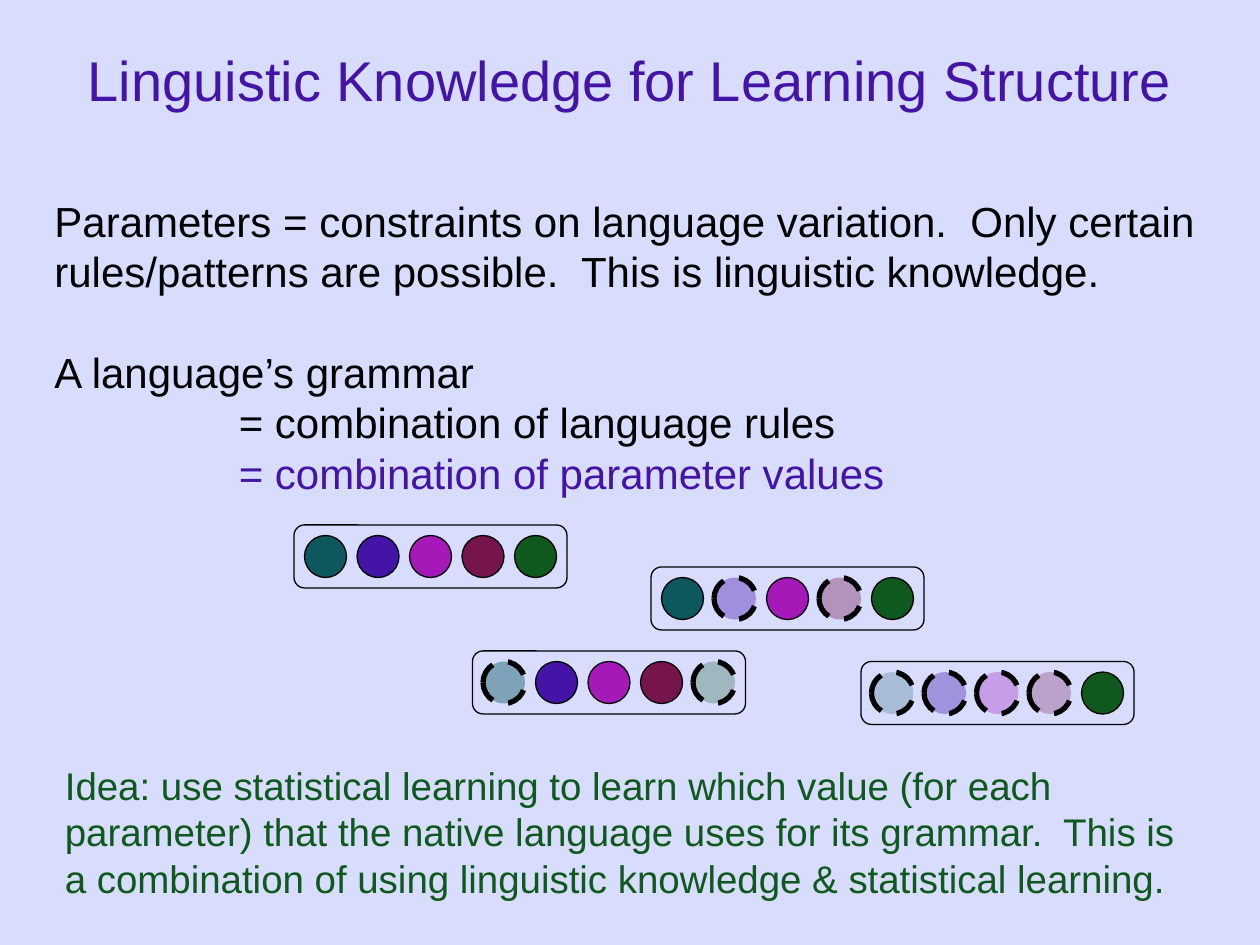
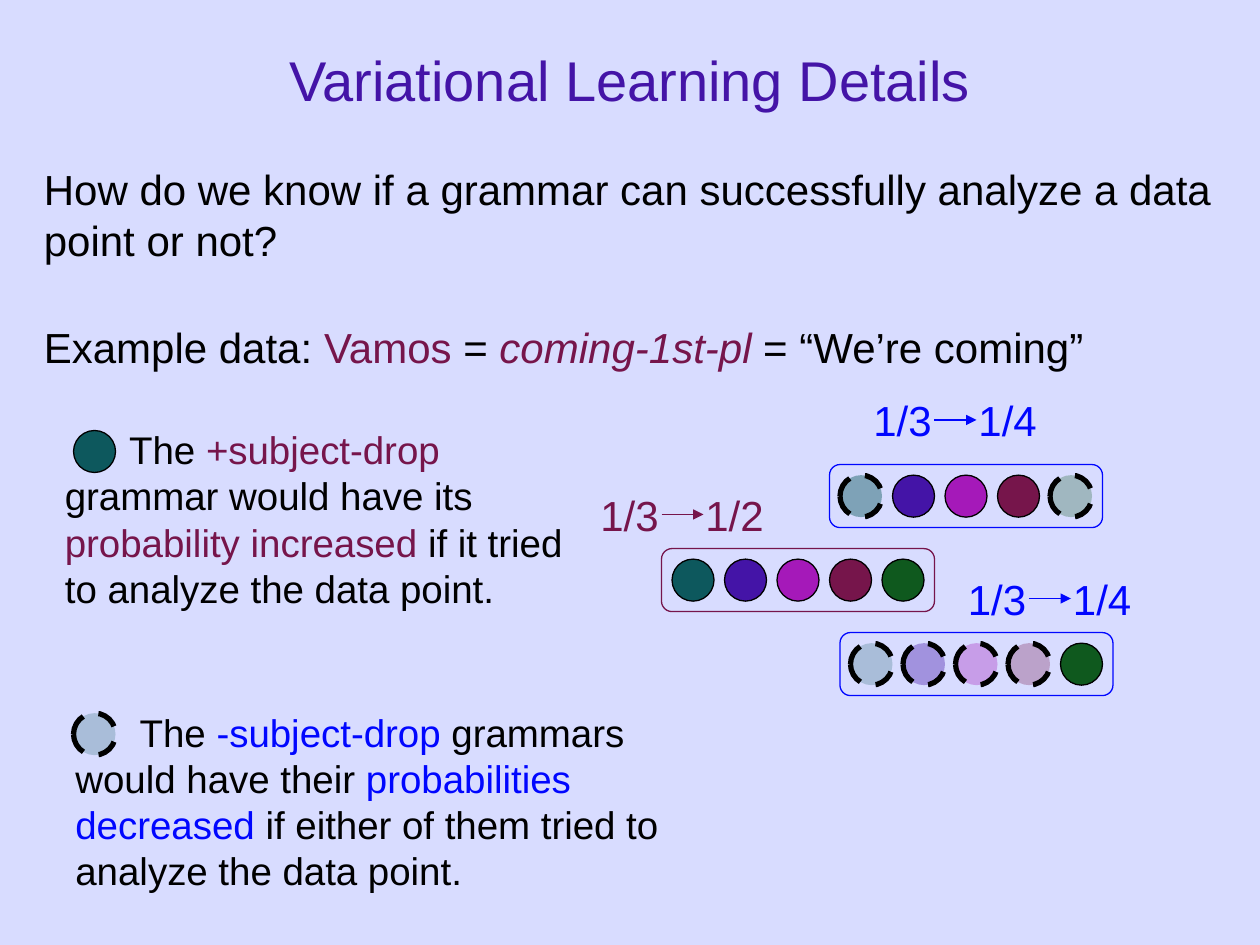
from lxml import etree
from pptx import Presentation
from pptx import util as u
from pptx.dml.color import RGBColor
from pptx.enum import dml, shapes, text
from pptx.oxml import ns

COLORS = {
    "ground": "D8DCFF", "black": "000000", "blue": "0006FF",
    "teal": "0D585D", "violet": "4414A7", "magenta": "A519B9",
    "wine": "76154B", "green": "0F591E",
}
FONT = "Arial"
PARAMETERS = ("teal", "violet", "magenta", "wine", "green")

# Opacity in percent of each parameter value; 100 is a solid value
ALL_SOLID = (100, 100, 100, 100, 100)
TWO_FADED = (100, 38, 100, 37, 100)
ENDS_FADED = (44, 100, 100, 100, 28)
MOST_FADED = (23, 37, 32, 29, 100)

DOT, DOT_STEP, FRAME_PAD = 24, 30, 6
FRAME_WIDTH = 2 * FRAME_PAD + 4 * DOT_STEP + DOT
FRAME_HEIGHT = 2 * FRAME_PAD + DOT


def color(name):
    return RGBColor.from_string(COLORS[name])


def points(*lengths):
    return [u.Pt(length) for length in lengths]


def add_child(parent, tag, **attributes):
    return etree.SubElement(parent, ns.qn(tag), attributes)


def add_page(deck, title):
    page = deck.slides.add_slide(deck.slide_layouts[6])
    page.background.fill.solid()
    page.background.fill.fore_color.rgb = color("ground")
    add_text(page, [title], 0, 0, 720, 90, size=32, ink="violet",
             align=text.PP_ALIGN.CENTER, anchor=text.MSO_ANCHOR.MIDDLE)
    return page


def add_text(page, paragraphs, left, top, width, height, size=24, ink="black",
             align=text.PP_ALIGN.LEFT, anchor=text.MSO_ANCHOR.TOP):
    """Each paragraph is a string or a list of (string, ink, italic) spans."""
    box = page.shapes.add_textbox(*points(left, top, width, height))
    frame = box.text_frame
    frame.word_wrap = True
    frame.vertical_anchor = anchor
    for index, spans in enumerate(paragraphs):
        para = frame.paragraphs[0] if index == 0 else frame.add_paragraph()
        para.alignment = align
        if isinstance(spans, str):
            spans = [(spans, ink, False)]
        for words, span_ink, italic in spans:
            span = para.add_run()
            span.text = words
            span.font.name = FONT
            span.font.size = u.Pt(size)
            span.font.italic = italic
            span.font.color.rgb = color(span_ink)
    return frame.paragraphs


def set_indent(para, left=0, first=0):
    properties = para._p.get_or_add_pPr()
    properties.set("marL", str(u.Pt(left)))
    properties.set("indent", str(u.Pt(first)))


def add_dot(page, left, top, fill, opacity=100):
    dot = page.shapes.add_shape(shapes.MSO_SHAPE.OVAL,
                                *points(left, top, DOT, DOT))
    dot.shadow.inherit = False
    dot.fill.solid()
    dot.fill.fore_color.rgb = color(fill)
    dot.line.color.rgb = color("black")
    dot.line.width = u.Pt(0.75)
    if opacity < 100:
        shade = dot._element.spPr.find(ns.qn("a:solidFill"))[0]
        add_child(shade, "a:alpha", val=str(opacity * 1000))
        dot.line.width = u.Pt(3)
        dot.line.dash_style = dml.MSO_LINE.DASH


def add_grammar(page, left, top, opacities, outline="black"):
    """A framed row of parameter values."""
    for index, (fill, opacity) in enumerate(zip(PARAMETERS, opacities)):
        add_dot(page, left + FRAME_PAD + index * DOT_STEP, top + FRAME_PAD,
                fill, opacity)
    frame = page.shapes.add_shape(
        shapes.MSO_SHAPE.ROUNDED_RECTANGLE,
        *points(left, top, FRAME_WIDTH, FRAME_HEIGHT))
    frame.shadow.inherit = False
    frame.fill.background()
    frame.line.color.rgb = color(outline)
    frame.line.width = u.Pt(0.75)


def add_change(page, left, top, before, after, ink):
    """Two probabilities with an arrow between them."""
    para = add_text(page, [f"{before}\t{after}"], left, top, 115, 36, ink=ink)[0]
    tabs = add_child(para._p.get_or_add_pPr(), "a:tabLst")
    add_child(tabs, "a:tab", pos=str(u.Pt(60)), algn="l")

    start, middle = left + 42, top + 18
    arrow = page.shapes.add_connector(
        shapes.MSO_CONNECTOR.STRAIGHT,
        *points(start, middle, start + 24, middle))
    arrow.line.color.rgb = color(ink)
    arrow.line.width = u.Pt(0.75)
    add_child(arrow.line._get_or_add_ln(), "a:tailEnd", type="triangle")
    add_child(arrow._element.spPr, "a:effectLst")


def add_verdict(page, left, top, width, spans, opacity=100):
    """A paragraph led by the dot of the parameter value it explains."""
    para = add_text(page, [spans], left, top, width, 113, size=22)[0]
    set_indent(para, first=36.7)
    add_dot(page, 42, top + 6, "teal", opacity)


def build_knowledge_page(deck):
    page = add_page(deck, "Linguistic Knowledge for Learning Structure")
    paragraphs = add_text(page, [
        "Parameters = constraints on language variation.  Only certain "
        "rules/patterns are possible.  This is linguistic knowledge.",
        "A language’s grammar",
        "= combination of language rules",
        [("= combination of parameter values", "violet", False)],
    ], 24, 108, 696, 237.6)
    paragraphs[1].space_before = u.Pt(28.8)
    for para in paragraphs[2:]:
        set_indent(para, left=105.4)

    # Candidate grammars
    for left, top, opacities in (
        (372, 324, TWO_FADED), (168, 300, ALL_SOLID),
        (492, 378, MOST_FADED), (270, 372, ENDS_FADED),
    ):
        add_grammar(page, left, top, opacities)

    add_text(page, [
        "Idea: use statistical learning to learn which value (for each "
        "parameter) that the native language uses for its grammar.  This is a "
        "combination of using linguistic knowledge & statistical learning.",
    ], 30, 432, 660, 86.4, size=22, ink="green")


def build_details_page(deck):
    page = add_page(deck, "Variational Learning Details")
    add_text(page, ["How do we know if a grammar can successfully analyze a "
                    "data point or not?"], 18, 90, 684, 64.8)
    add_text(page, [[
        ("Example data: ", "black", False), ("Vamos", "wine", False),
        (" = ", "black", False), ("coming-1st-pl", "wine", True),
        (" = “We’re coming”", "black", False),
    ]], 18, 180, 678, 36)

    # Grammars and the change of their probabilities
    for left, top, opacities, ink in (
        (378, 313.5, ALL_SOLID, "wine"), (480, 361.5, MOST_FADED, "blue"),
        (474, 265.5, ENDS_FADED, "blue"),
    ):
        add_grammar(page, left, top, opacities, outline=ink)
    for left, top, after, ink in (
        (492, 222, "1/4", "blue"), (336, 276, "1/2", "wine"),
        (546, 324, "1/4", "blue"),
    ):
        add_change(page, left, top, "1/3", after, ink)

    # Outcome for each value of the parameter
    add_verdict(page, 30, 240, 300, [
        ("The ", "black", False), ("+subject-drop", "wine", False),
        (" grammar would have its ", "black", False),
        ("probability increased", "wine", False),
        (" if it tried to analyze the data point.", "black", False),
    ])
    add_verdict(page, 36, 401.5, 372, [
        ("The ", "black", False), ("-subject-drop", "blue", False),
        (" grammars would have their ", "black", False),
        ("probabilities decreased", "blue", False),
        (" if either of them tried to analyze the data point.", "black", False),
    ], opacity=MOST_FADED[0])


def main():
    deck = Presentation()
    deck.slide_width, deck.slide_height = points(720, 540)
    build_knowledge_page(deck)
    build_details_page(deck)
    deck.save("out.pptx")


if __name__ == "__main__":
    main()
